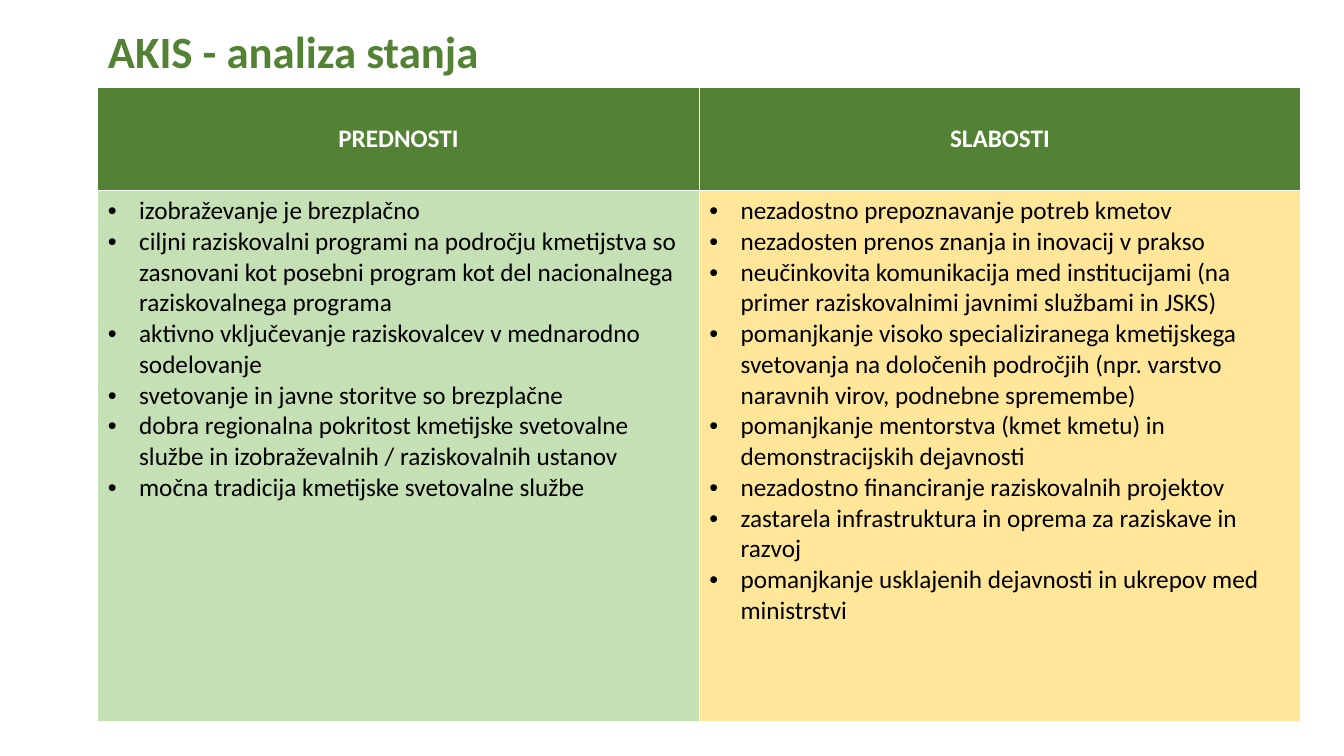
from dataclasses import dataclass

from lxml.etree import SubElement
from pptx import Presentation
from pptx.dml.color import RGBColor
from pptx.enum.text import MSO_ANCHOR, MSO_AUTO_SIZE, PP_ALIGN
from pptx.oxml.ns import qn
from pptx.util import Inches, Pt


@dataclass(frozen=True)
class Theme:
    font: str = "Calibri"
    green: str = "548235"
    pale_green: str = "C5E0B4"
    pale_yellow: str = "FFE699"
    white: str = "FFFFFF"
    black: str = "000000"
    title_size: int = 32
    body_size: int = 18
    border_width: int = 1


@dataclass(frozen=True)
class Box:
    left: float
    top: float
    width: float
    height: float

    def lengths(self):
        return [Inches(n) for n in (self.left, self.top, self.width, self.height)]


THEME = Theme()
TITLE_BOX = Box(0.97, -0.14, 7.22, 1.35)
TABLE_BOX = Box(0.97, 0.87, 11.93, 6.29)
HEADER_HEIGHT = 1.02
BULLET_INDENT = 0.31

COLUMNS = [
    ("PREDNOSTI", THEME.pale_green, [
        "izobraževanje je brezplačno",
        "ciljni raziskovalni programi na področju kmetijstva so zasnovani kot "
        "posebni program kot del nacionalnega raziskovalnega programa",
        "aktivno vključevanje raziskovalcev v mednarodno sodelovanje",
        "svetovanje in javne storitve so brezplačne",
        "dobra regionalna pokritost kmetijske svetovalne službe in "
        "izobraževalnih / raziskovalnih ustanov",
        "močna tradicija kmetijske svetovalne službe",
    ]),
    ("SLABOSTI", THEME.pale_yellow, [
        "nezadostno prepoznavanje potreb kmetov",
        "nezadosten prenos znanja in inovacij v prakso",
        "neučinkovita komunikacija med institucijami (na primer "
        "raziskovalnimi javnimi službami in JSKS)",
        "pomanjkanje visoko specializiranega kmetijskega svetovanja na "
        "določenih področjih (npr. varstvo naravnih virov, podnebne spremembe)",
        "pomanjkanje mentorstva (kmet kmetu) in demonstracijskih dejavnosti",
        "nezadostno financiranje raziskovalnih projektov",
        "zastarela infrastruktura in oprema za raziskave in razvoj",
        "pomanjkanje usklajenih dejavnosti in ukrepov med ministrstvi",
    ]),
]


def add_span(para, text, size, color, bold=False):
    span = para.add_run()
    span.text = text
    span.font.name = THEME.font
    span.font.size = Pt(size)
    span.font.bold = bold
    span.font.color.rgb = RGBColor.from_string(color)


def add_bullet(para):
    properties = para._p.get_or_add_pPr()
    properties.set("marL", str(Inches(BULLET_INDENT)))
    properties.set("indent", str(-Inches(BULLET_INDENT)))
    SubElement(properties, qn("a:buFont"), typeface="Arial")
    SubElement(properties, qn("a:buChar"), char="•")


def paint_cell(cell, color):
    """Give the cell thin white borders and a solid fill."""
    properties = cell._tc.get_or_add_tcPr()
    for side in ("a:lnL", "a:lnR", "a:lnT", "a:lnB"):
        line = SubElement(properties, qn(side), w=str(Pt(THEME.border_width)))
        solid = SubElement(line, qn("a:solidFill"))
        SubElement(solid, qn("a:srgbClr"), val=THEME.white)
    cell.fill.solid()
    cell.fill.fore_color.rgb = RGBColor.from_string(color)


def fill_header(cell, text):
    paint_cell(cell, THEME.green)
    cell.vertical_anchor = MSO_ANCHOR.MIDDLE
    para = cell.text_frame.paragraphs[0]
    para.alignment = PP_ALIGN.CENTER
    add_span(para, text, THEME.body_size, THEME.white, bold=True)


def fill_list(cell, color, items):
    paint_cell(cell, color)
    frame = cell.text_frame
    for index, item in enumerate(items):
        para = frame.add_paragraph() if index else frame.paragraphs[0]
        add_bullet(para)
        add_span(para, item, THEME.body_size, THEME.black)


def place_title(page, box, text):
    title = page.shapes.title
    title.left, title.top, title.width, title.height = box.lengths()
    frame = title.text_frame
    frame.auto_size = MSO_AUTO_SIZE.NONE
    frame.word_wrap = True
    frame.vertical_anchor = MSO_ANCHOR.MIDDLE
    para = frame.paragraphs[0]
    para.alignment = PP_ALIGN.LEFT
    para.line_spacing = 0.9
    add_span(para, text, THEME.title_size, THEME.green, bold=True)


def add_comparison(page, box, columns):
    table = page.shapes.add_table(2, len(columns), *box.lengths()).table
    table.rows[0].height = Inches(HEADER_HEIGHT)
    table.rows[1].height = Inches(box.height - HEADER_HEIGHT)
    for index, (heading, color, items) in enumerate(columns):
        table.columns[index].width = Inches(box.width / len(columns))
        fill_header(table.cell(0, index), heading)
        fill_list(table.cell(1, index), color, items)


def main():
    deck = Presentation()
    deck.slide_width = Inches(13.33)
    deck.slide_height = Inches(7.5)
    page = deck.slides.add_slide(deck.slide_layouts.get_by_name("Title Only"))
    add_comparison(page, TABLE_BOX, COLUMNS)
    place_title(page, TITLE_BOX, "AKIS - analiza stanja")
    deck.save("out.pptx")


if __name__ == "__main__":
    main()
